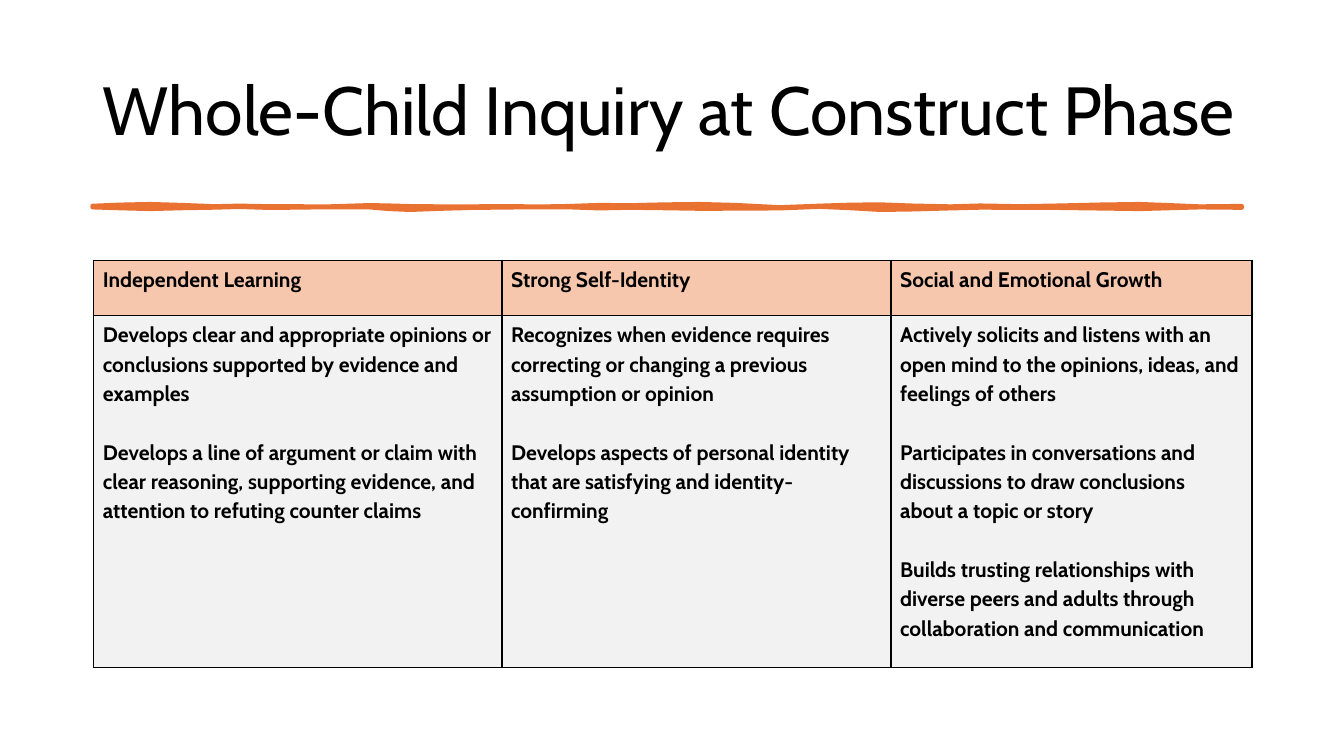
from pptx import Presentation
from pptx.dml.color import RGBColor
from pptx.enum import text as t
from pptx.oxml import parse_xml
from pptx.oxml.ns import nsdecls
from pptx.util import Pt

BLACK = RGBColor(0x00, 0x00, 0x00)
ORANGE = RGBColor(0xE9, 0x71, 0x32)
PEACH = RGBColor(0xF6, 0xC6, 0xAD)
GRAY = RGBColor(0xF2, 0xF2, 0xF2)

TITLE = "Whole-Child Inquiry at Construct Phase"
GOALS = {
    "Independent Learning": [
        "Develops clear and appropriate opinions or conclusions supported by evidence and examples",
        "Develops a line of argument or claim with clear reasoning, supporting evidence, "
        "and attention to refuting counter claims",
    ],
    "Strong Self-Identity": [
        "Recognizes when evidence requires correcting or changing a previous assumption or opinion",
        "Develops aspects of personal identity that are satisfying and identity-confirming",
    ],
    "Social and Emotional Growth": [
        "Actively solicits and listens with an open mind to the opinions, ideas, and feelings of others",
        "Participates in conversations and discussions to draw conclusions about a topic or story",
        "Builds trusting relationships with diverse peers and adults through "
        "collaboration and communication",
    ],
}
WIDTHS = [291.6, 277.9, 257.8]
HEIGHTS = [39.6, 251.3]

STROKE = [
    (66.2, 147.2, 148), (85, 146.4, 148.6), (107, 145.9, 149.2), (130, 146.6, 148.6),
    (153, 147.5, 148.2), (171, 147.1, 147.7), (193, 147.5, 148.4), (235, 147.6, 147.9),
    (264, 146.7, 148), (278, 147, 149.2), (293, 147.4, 149.8), (315, 147.6, 149),
    (336, 147.6, 148.4), (362, 147.4, 148.1), (386, 147.7, 147.9), (408, 147.3, 148),
    (428, 146.6, 148.7), (450, 146.8, 148.3), (475, 146.2, 148.6), (500, 145.9, 149),
    (525, 146.6, 148.9), (557, 148.2, 148.7), (586, 147.1, 147.6), (608, 146.4, 148.6),
    (629, 146.2, 149.8), (650, 147, 149.5), (679, 147.6, 148.7), (700, 147, 148.2),
    (729, 147.5, 148.3), (757, 147, 148.4), (786, 146.3, 148.8), (814, 145.9, 149.2),
    (835, 146.7, 148.6), (857, 147.6, 148), (887, 147.3, 148.3),
]


def write(frame, *lines, size=15, bold=True, gap=0, space=1.15):
    for i, line in enumerate(lines):
        para = frame.paragraphs[0] if i == 0 else frame.add_paragraph()
        para.alignment = t.PP_ALIGN.LEFT
        para.line_spacing = space
        if i:
            para.space_before = Pt(gap)
        run = para.add_run()
        run.text = line
        font = run.font
        font.name, font.size, font.bold = "Cabin", Pt(size), bold
        font.color.rgb = BLACK


class Deck:
    def __init__(self):
        self.file = Presentation()
        self.file.slide_width, self.file.slide_height = Pt(960), Pt(540)
        self.page = self.file.slides.add_slide(self.file.slide_layouts[5])

    def title(self, words, left, top, width, height):
        box = self.page.shapes.title
        box.left, box.top, box.width, box.height = map(Pt, (left, top, width, height))
        frame = box.text_frame
        frame.word_wrap = True
        frame.auto_size = t.MSO_AUTO_SIZE.NONE
        frame.vertical_anchor = t.MSO_ANCHOR.MIDDLE
        write(frame, words, size=48.6, bold=False, space=0.9)

    def brush(self, marks):
        upper = [(Pt(x), Pt(y)) for x, y, _ in marks]
        lower = [(Pt(x), Pt(y)) for x, _, y in reversed(marks)]
        maker = self.page.shapes.build_freeform(*upper[0])
        maker.add_line_segments(upper[1:] + lower, close=True)
        shape = maker.convert_to_shape()
        shape.shadow.inherit = False
        shape.fill.solid()
        shape.fill.fore_color.rgb = ORANGE
        shape.line.color.rgb = ORANGE
        shape.line.width = Pt(3.25)
        shape.line._ln.append(parse_xml(f"<a:round {nsdecls('a')}/>"))

    def border(self, cell):
        props = cell._tc.get_or_add_tcPr()
        for i, side in enumerate("LRTB"):
            props.insert(i, parse_xml(
                f'<a:ln{side} {nsdecls("a")} w="{Pt(1)}"><a:solidFill>'
                f'<a:srgbClr val="{BLACK}"/></a:solidFill></a:ln{side}>'))

    def cell(self, cell, lines, color):
        cell.margin_left, cell.margin_top = Pt(6.5), Pt(2.2)
        cell.margin_right, cell.margin_bottom = Pt(7.2), Pt(13.7)
        cell.fill.solid()
        cell.fill.fore_color.rgb = color
        self.border(cell)
        write(cell.text_frame, *lines, gap=21)

    def table(self, goals, left, top):
        grid = self.page.shapes.add_table(
            len(HEIGHTS), len(WIDTHS), Pt(left), Pt(top),
            Pt(sum(WIDTHS)), Pt(sum(HEIGHTS))).table
        grid.first_row = grid.horz_banding = False
        for row, height in zip(grid.rows, HEIGHTS):
            row.height = Pt(height)
        for i, (head, items) in enumerate(goals.items()):
            grid.columns[i].width = Pt(WIDTHS[i])
            self.cell(grid.cell(0, i), [head], PEACH)
            self.cell(grid.cell(1, i), items, GRAY)


def main():
    deck = Deck()
    deck.title(TITLE, 66.2, 28.8, 828, 104.4)
    deck.brush(STROKE)
    deck.table(GOALS, 67, 185.8)
    deck.file.save("out.pptx")


if __name__ == "__main__":
    main()
